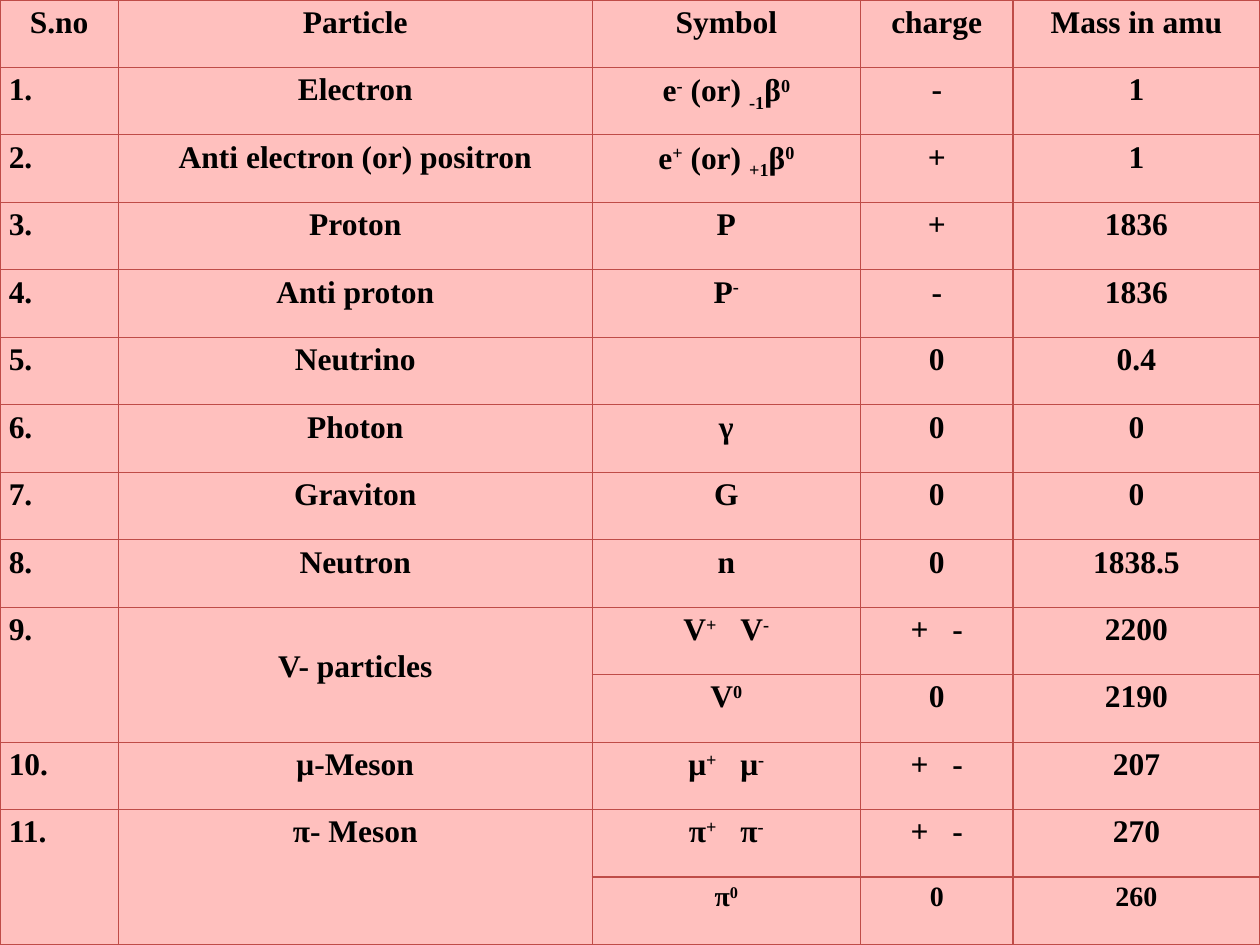
from lxml import etree
from pptx import Presentation
from pptx.dml.color import RGBColor
from pptx.enum.text import PP_ALIGN
from pptx.oxml.ns import qn
from pptx.util import Inches, Pt

CENTER, JUSTIFY = PP_ALIGN.CENTER, PP_ALIGN.JUSTIFY
WIDE, HIGH = Inches(10), Inches(7.5)
FONT, INK, PINK, EDGE = "Times New Roman", "000000", "FFC0BE", "BF4C48"
SHARES = [0.094, 0.376, 0.213, 0.121, 0.196]
BASE = {"^": "30000", "_": "-25000"}
ROWS = [
    ["S.no", "Particle", "Symbol", "charge", "Mass in amu"],
    ["1.", "Electron", "e|^-| (or) |_-1|β|^0", "-", "1"],
    ["2.", "Anti electron (or) positron", "e|^+| (or) |_+1|β|^0", "+", "1"],
    ["3.", "Proton", "P", "+", "1836"],
    ["4.", "Anti proton", "P|^-", "-", "1836"],
    ["5.", "Neutrino", "", "0", "0.4"],
    ["6.", "Photon", "γ", "0", "0"],
    ["7.", "Graviton", "G", "0", "0"],
    ["8.", "Neutron", "n", "0", "1838.5"],
    ["9.", "V- particles", "V|^+|~|V|^-", "+|~|-", "2200"],
    ["", "", "V|^0", "0", "2190"],
    ["10.", "μ-Meson", "μ|^+|~|μ|^-", "+|~|-", "207"],
    ["11.", "π- Meson", "π|^+|~|π|^-", "+|~|-", "270"],
    ["", "", "π|^0", "0", "260"],
]


def paint(text):
    """Turn a hex string into a colour."""
    return RGBColor.from_string(text)


def frame(cell):
    """Fill a cell and rule its four sides."""
    cell.fill.solid()
    cell.fill.fore_color.rgb = paint(PINK)
    props = cell._tc.get_or_add_tcPr()
    for spot, side in enumerate(("lnL", "lnR", "lnT", "lnB")):
        line = etree.Element(qn(f"a:{side}"), w=str(Pt(0.75)))
        solid = etree.SubElement(line, qn("a:solidFill"))
        etree.SubElement(solid, qn("a:srgbClr"), val=EDGE)
        props.insert(spot, line)


def write(cell, text, size, align):
    """Write marked text: ^ raises a run, _ lowers it, ~ is a wide space."""
    cell.margin_left = cell.margin_right = Inches(0.07)
    cell.margin_top = cell.margin_bottom = 0
    para = cell.text_frame.paragraphs[0]
    para.alignment, para.line_spacing = align, 1.15
    for part in filter(None, text.split("|")):
        run = para.add_run()
        run.text = " " if part == "~" else part.lstrip("^_")
        font = run.font
        font.name, font.size, font.bold = FONT, Pt(size), True
        font.color.rgb = paint(INK)
        if part == "~":
            run._r.get_or_add_rPr().set("spc", "900")
        elif part[0] in BASE:
            run._r.get_or_add_rPr().set("baseline", BASE[part[0]])


def chart(slide, left, top, width, height):
    """Lay the particle table into the given box."""
    count = len(ROWS)
    table = slide.shapes.add_table(
        count, len(SHARES), left, top, width, height).table
    table.first_row = table.horz_banding = False
    for col, share in zip(table.columns, SHARES):
        col.width = int(width * share)
    for row, texts in enumerate(ROWS):
        table.rows[row].height = int(height / count)
        size = 16 if row == count - 1 else 18
        for col, text in enumerate(texts):
            cell = table.cell(row, col)
            frame(cell)
            write(cell, text, size, CENTER if row == 0 or col else JUSTIFY)
    for row, texts in enumerate(ROWS):
        if not texts[0]:
            for col in (0, 1):
                table.cell(row - 1, col).merge(table.cell(row, col))
    table.cell(9, 1).margin_top = Inches(0.29)


def main():
    """Build and save the slide."""
    deck = Presentation()
    deck.slide_width, deck.slide_height = WIDE, HIGH
    slide = deck.slides.add_slide(deck.slide_layouts[6])
    chart(slide, 0, 0, WIDE, HIGH)
    deck.save("out.pptx")


if __name__ == "__main__":
    main()
